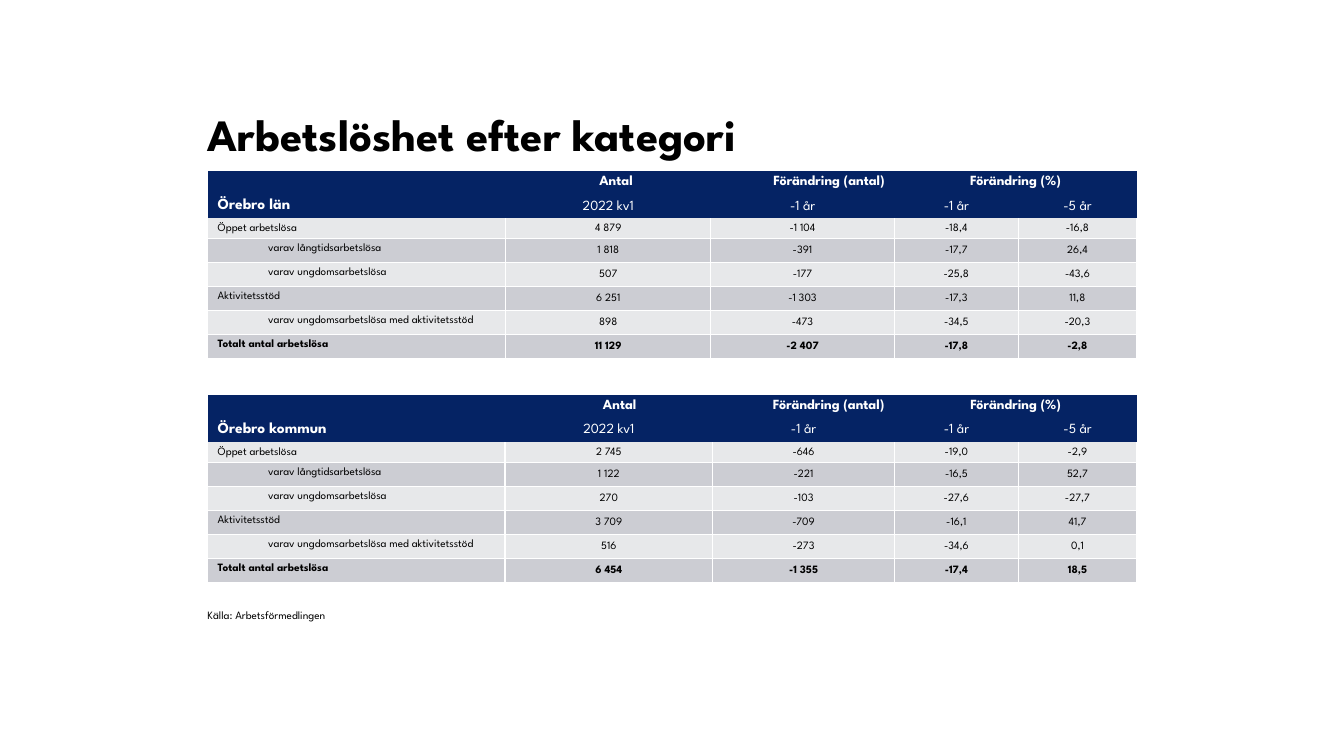
"""Build the slide on unemployment by category in Örebro county and municipality."""
import pptx
import pptx.dml.color
import pptx.enum.text
import pptx.util
from lxml import etree

Pt = pptx.util.Pt
RGBColor = pptx.dml.color.RGBColor
PP_ALIGN = pptx.enum.text.PP_ALIGN
MSO_ANCHOR = pptx.enum.text.MSO_ANCHOR
MSO_AUTO_SIZE = pptx.enum.text.MSO_AUTO_SIZE
qn = pptx.oxml.ns.qn

NAVY = RGBColor(0x05, 0x23, 0x64)
LIGHT = RGBColor(0xE7, 0xE8, 0xEA)
GREY = RGBColor(0xCC, 0xCD, 0xD3)
WHITE = RGBColor(0xFF, 0xFF, 0xFF)
BLACK = RGBColor(0, 0, 0)
FONT = "League Spartan"

LEFT = 148.3
WIDTH = 663.6
ROW_HEIGHTS = [16.4, 17.3, 14.6] + [17.1] * 5
CATEGORIES = [
    ("Öppet arbetslösa", 0),
    ("varav långtidsarbetslösa", 1),
    ("varav ungdomsarbetslösa", 1),
    ("Aktivitetsstöd", 0),
    ("varav ungdomsarbetslösa med aktivitetsstöd", 1),
    ("Totalt antal arbetslösa", 0),
]
PERIODS = ["2022 kv1", "-1 år", "-1 år", "-5 år"]
REGIONS = [
    {"name": "Örebro län", "top": 122.2, "columns": [213, 146.4, 131.2, 88.6, 84.4],
     "count_inset": 66.8, "change_tab": 124.3,
     "figures": [
         ["4 879", "-1 104", "-18,4", "-16,8"],
         ["1 818", "-391", "-17,7", "26,4"],
         ["507", "-177", "-25,8", "-43,6"],
         ["6 251", "-1 303", "-17,3", "11,8"],
         ["898", "-473", "-34,5", "-20,3"],
         ["11 129", "-2 407", "-17,8", "-2,8"],
     ]},
    {"name": "Örebro kommun", "top": 282.2, "columns": [212.4, 148.4, 129.8, 88.6, 84.4],
     "count_inset": 70, "change_tab": 121.4,
     "figures": [
         ["2 745", "-646", "-19,0", "-2,9"],
         ["1 122", "-221", "-16,5", "52,7"],
         ["270", "-103", "-27,6", "-27,7"],
         ["3 709", "-709", "-16,1", "41,7"],
         ["516", "-273", "-34,6", "0,1"],
         ["6 454", "-1 355", "-17,4", "18,5"],
     ]},
]


def write(paragraph, text, size, color, bold=False, align=PP_ALIGN.LEFT):
    paragraph.text = text
    paragraph.alignment = align
    for run in paragraph.runs:
        run.font.name = FONT
        run.font.size = Pt(size)
        run.font.bold = bold
        run.font.color.rgb = color


def paint(cell, fill, border, borderless_sides=()):
    properties = cell._tc.get_or_add_tcPr()
    for side in ("lnL", "lnR", "lnT", "lnB"):
        line = etree.SubElement(properties, qn(f"a:{side}"), w=str(Pt(1)))
        if border is None or side in borderless_sides:
            etree.SubElement(line, qn("a:noFill"))
        else:
            solid = etree.SubElement(line, qn("a:solidFill"))
            etree.SubElement(solid, qn("a:srgbClr"), val=str(border))
    cell.fill.solid()
    cell.fill.fore_color.rgb = fill


presentation = pptx.Presentation()
presentation.slide_width = Pt(960)
presentation.slide_height = Pt(540)
slide = presentation.slides.add_slide(presentation.slide_layouts[5])

title = slide.shapes.title
title.left, title.top, title.width, title.height = Pt(LEFT), Pt(26.6), Pt(WIDTH), Pt(87.8)
heading = title.text_frame
heading.margin_left = heading.margin_right = heading.margin_top = heading.margin_bottom = 0
heading.vertical_anchor = MSO_ANCHOR.BOTTOM
heading.auto_size = MSO_AUTO_SIZE.NONE
heading.word_wrap = True
write(heading.paragraphs[0], "Arbetslöshet efter kategori", 32, BLACK, True)

for region in REGIONS:
    table = slide.shapes.add_table(8, 5, Pt(LEFT), Pt(region["top"]), Pt(WIDTH),
                                   Pt(sum(ROW_HEIGHTS))).table
    for column, width in zip(table.columns, region["columns"]):
        column.width = Pt(width)
    for row, height in zip(table.rows, ROW_HEIGHTS):
        row.height = Pt(height)

    for column in range(5):
        top_cell = table.cell(0, column)
        paint(top_cell, NAVY, None)
        if column in (0, 2, 4):
            empty_end = top_cell.text_frame.paragraphs[0]._p.get_or_add_endParaRPr()
            empty_end.set("sz", "1000")
            etree.SubElement(empty_end, qn("a:latin"), typeface=FONT)
    table.cell(0, 1).merge(table.cell(0, 2))
    table.cell(0, 3).merge(table.cell(0, 4))

    count_heading = table.cell(0, 1)
    count_heading.margin_left = Pt(region["count_inset"])
    count_heading.margin_right = 0
    count_paragraph = count_heading.text_frame.paragraphs[0]
    tab_list = etree.SubElement(count_paragraph._p.get_or_add_pPr(), qn("a:tabLst"))
    etree.SubElement(tab_list, qn("a:tab"), pos=str(Pt(region["change_tab"])), algn="l")
    write(count_paragraph, "Antal\tFörändring (antal)", 10, WHITE, True)
    write(table.cell(0, 3).text_frame.paragraphs[0], "Förändring (%)", 10, WHITE, True,
          PP_ALIGN.CENTER)

    labels = [(region["name"], 0)] + CATEGORIES
    for row, ((label, level), figures) in enumerate(zip(labels, [PERIODS] + region["figures"]), 1):
        is_header, is_total = row == 1, row == 7
        color = WHITE if is_header else BLACK
        fill = NAVY if is_header else (GREY if row % 2 else LIGHT)
        border = None if is_header else WHITE
        borderless_sides = ("lnT",) if row == 2 else ()

        label_cell = table.cell(row, 0)
        paint(label_cell, fill, border, borderless_sides)
        label_paragraph = label_cell.text_frame.paragraphs[0]
        if level:
            label_paragraph.level = level
            label_properties = label_paragraph._p.get_or_add_pPr()
            label_properties.set("marL", str(Pt(36)))
            label_properties.set("indent", "0")
        write(label_paragraph, label, 11 if is_header else 8, color, is_header or is_total)

        for column, figure in enumerate(figures, 1):
            cell = table.cell(row, column)
            paint(cell, fill, border, borderless_sides)
            cell.margin_left = cell.margin_right = cell.margin_top = Pt(0.7)
            cell.margin_bottom = 0
            cell.vertical_anchor = MSO_ANCHOR.MIDDLE
            write(cell.text_frame.paragraphs[0], figure, 10 if is_header else 8, color,
                  is_total, PP_ALIGN.CENTER)

source = slide.shapes.add_textbox(Pt(141.1), Pt(431.3), Pt(118.1), Pt(17.3)).text_frame
source.word_wrap = False
source.auto_size = MSO_AUTO_SIZE.SHAPE_TO_FIT_TEXT
write(source.paragraphs[0], "Källa: Arbetsförmedlingen", 8, BLACK)

presentation.save("out.pptx")
